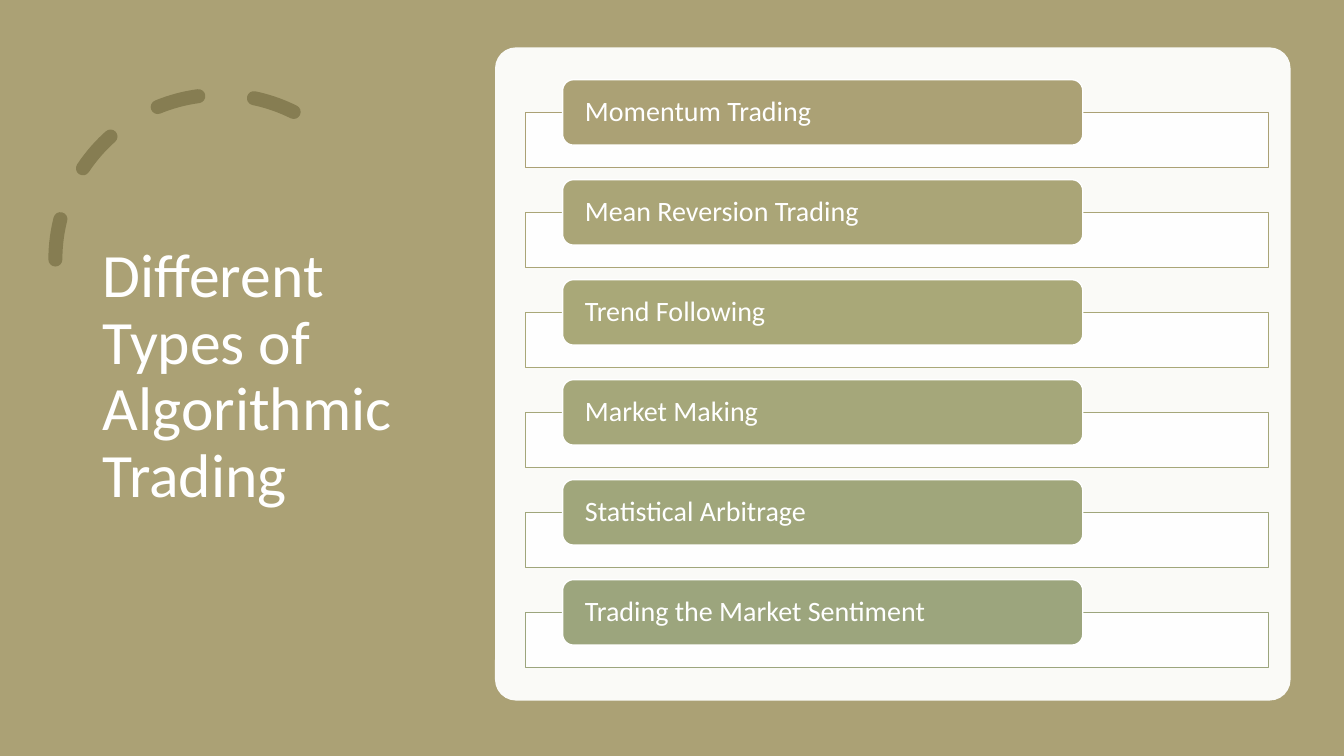
from lxml.etree import SubElement as Sub
from pptx import Presentation
from pptx.dml.color import RGBColor
from pptx.enum.dml import MSO_LINE as Dash
from pptx.enum.shapes import MSO_SHAPE as Kind
from pptx.enum.text import MSO_ANCHOR as Anchor, MSO_AUTO_SIZE as Fit, PP_ALIGN as Align
from pptx.oxml.ns import qn
from pptx.util import Inches, Pt

TYPES = [
    ("Momentum Trading", "ABA175"),
    ("Mean Reversion Trading", "AAA577"),
    ("Trend Following", "A9A878"),
    ("Market Making", "A5A77A"),
    ("Statistical Arbitrage", "A0A67B"),
    ("Trading the Market Sentiment", "9CA57D"),
]
TOP, STEP = 0.79, 0.992


def paint(color, value):
    color.rgb = RGBColor.from_string(value)


def write(frame, text, size=20, color="FFFFFF", font="Calibri", inset=0.1):
    frame.word_wrap = True
    frame.auto_size = Fit.NONE
    frame.vertical_anchor = Anchor.MIDDLE
    frame.margin_left = frame.margin_right = Inches(inset)
    frame.margin_top = frame.margin_bottom = 0
    para = frame.paragraphs[0]
    para.alignment = Align.LEFT
    para.line_spacing = 0.9
    run = para.add_run()
    run.text = text
    run.font.name = font
    run.font.size = Pt(size)
    paint(run.font.color, color)


class Deck:
    sand = "ABA175"
    olive = "867D52"
    white = "FFFFFF"

    def __init__(self):
        self.show = Presentation()
        self.show.slide_width = Inches(13.33)
        self.show.slide_height = Inches(7.5)
        self.slide = self.show.slides.add_slide(self.show.slide_layouts[5])

    def shape(self, kind, box, fill=None, line=None, width=1, alpha=100):
        item = self.slide.shapes.add_shape(kind, *map(Inches, box))
        item.shadow.inherit = False
        if fill:
            item.fill.solid()
            paint(item.fill.fore_color, fill)
            if alpha < 100:
                tone = item._element.spPr.find(qn("a:solidFill"))[0]
                Sub(tone, qn("a:alpha"), val=str(alpha * 1000))
        else:
            item.fill.background()
        if line:
            paint(item.line.color, line)
            item.line.width = Pt(width)
        else:
            item.line.fill.background()
        return item

    def title(self, text, box):
        item = self.slide.shapes.title
        item.left, item.top, item.width, item.height = map(Inches, box)
        write(item.text_frame, text, size=44, color=self.white)
        self.slide.shapes._spTree.append(item._element)

    def arc(self, box, start):
        item = self.shape(Kind.ARC, box, line=self.olive, width=10)
        item.adjustments[0] = start
        item.adjustments[1] = 0
        item.line.dash_style = Dash.DASH
        props = item._element.spPr
        props.find(qn("a:xfrm")).set("flipH", "1")
        props.find(qn("a:ln")).set("cap", "rnd")

    def panel(self, box):
        item = self.shape(Kind.ROUNDED_RECTANGLE, box, self.white, alpha=95)
        item.adjustments[0] = 0.032

    def row(self, top, text, color):
        self.shape(Kind.RECTANGLE, (5.21, top + 0.325, 7.37, 0.55),
                   self.white, color, alpha=90)
        pill = self.shape(Kind.ROUNDED_RECTANGLE, (5.58, top, 5.16, 0.65),
                          color, self.white)
        write(pill.text_frame, text, color=self.white, inset=0.19)


def main():
    deck = Deck()
    deck.shape(Kind.RECTANGLE, (0, 0, 13.33, 7.5), deck.sand)
    deck.arc((0.55, 0.94, 3.27, 3.27), 146.13)
    deck.title("Different Types of Algorithmic Trading", (0.92, 0.7, 3.23, 6.09))
    deck.panel((4.91, 0.47, 7.89, 6.48))
    for i, (text, color) in enumerate(TYPES):
        deck.row(TOP + i * STEP, text, color)
    deck.show.save("out.pptx")


if __name__ == "__main__":
    main()
